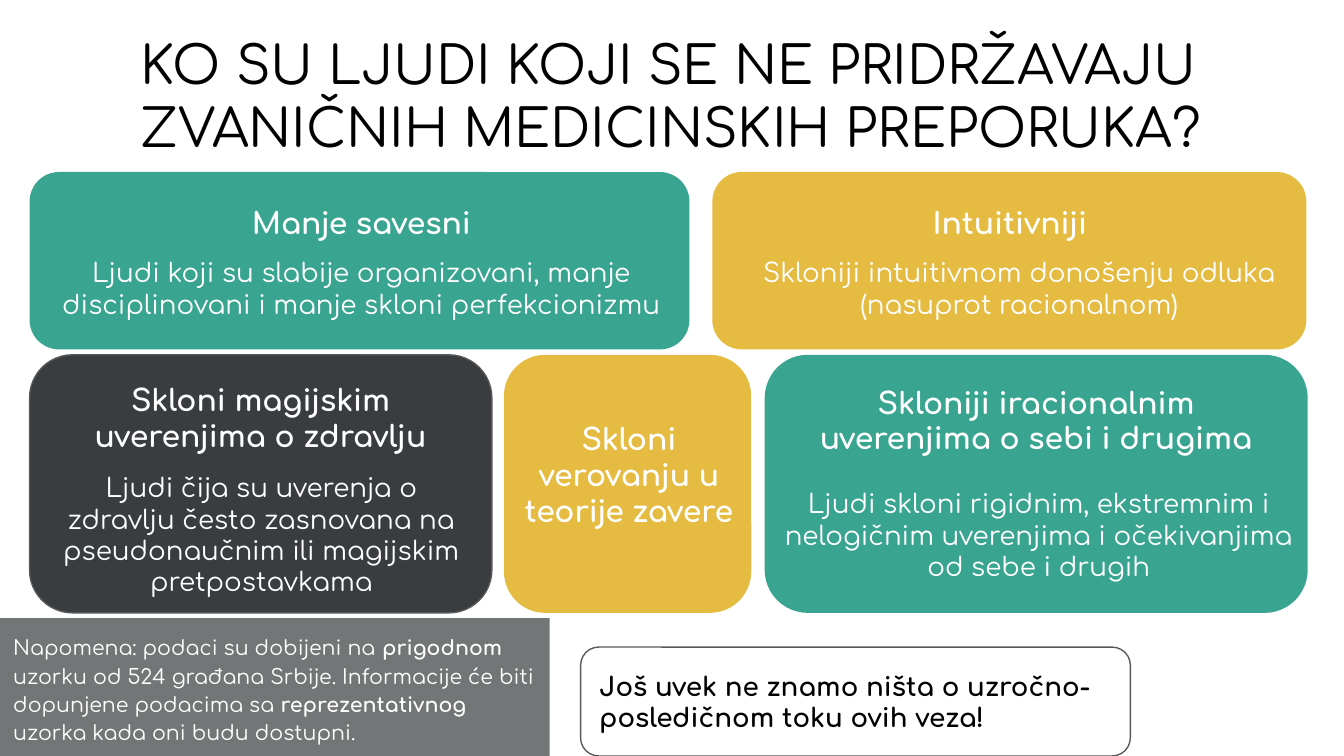
from dataclasses import dataclass

from pptx import Presentation
from pptx import util as u
from pptx.dml.color import RGBColor
from pptx.enum import shapes, text


@dataclass(frozen=True)
class Theme:
    font: str = "Comfortaa"
    black: str = "000000"
    white: str = "FFFFFF"
    green: str = "39A590"
    yellow: str = "E6BB41"
    dark: str = "3A3D40"
    grey: str = "737677"
    outline: str = "595959"
    title: int = 28
    heading: int = 16
    body: int = 14
    note: int = 11


class Deck:
    COLS, ROWS = 100, 56.25

    def __init__(self, theme):
        self.theme = theme
        self.prs = Presentation()
        self.prs.slide_width = u.Inches(10)
        self.prs.slide_height = u.Inches(5.625)
        self.slide = self.prs.slides.add_slide(self.prs.slide_layouts[6])

    def place(self, col, row, cols, rows):
        x = self.prs.slide_width / self.COLS
        y = self.prs.slide_height / self.ROWS
        return int(col * x), int(row * y), int(cols * x), int(rows * y)

    def panel(self, at, fill, line=None, kind=shapes.MSO_SHAPE.ROUNDED_RECTANGLE):
        sp = self.slide.shapes.add_shape(kind, *self.place(*at))
        sp.shadow.inherit = False
        sp.fill.solid()
        sp.fill.fore_color.rgb = RGBColor.from_string(fill)
        if line:
            sp.line.color.rgb = RGBColor.from_string(line)
            sp.line.width = u.Pt(0.75)
        else:
            sp.line.fill.background()
        return sp

    def set_text(self, sp, runs, size, color, bold=False, align=text.PP_ALIGN.LEFT,
                 anchor=text.MSO_ANCHOR.TOP, spacing=None):
        tf = sp.text_frame
        tf.word_wrap = True
        tf.vertical_anchor = anchor
        tf.margin_left = tf.margin_right = u.Inches(0.1)
        tf.margin_top = tf.margin_bottom = u.Inches(0.1)
        p = tf.paragraphs[0]
        p.alignment = align
        if spacing:
            p.line_spacing = spacing
        p.font.name = self.theme.font
        p.font.size = u.Pt(size)
        p.font.bold = bold
        p.font.color.rgb = RGBColor.from_string(color)
        for words, strong in runs:
            r = p.add_run()
            r.text = words
            if strong:
                r.font.bold = True

    def label(self, at, words, size, color, **style):
        sp = self.slide.shapes.add_textbox(*self.place(*at))
        self.set_text(sp, [(words, False)], size, color, **style)

    def card(self, at, fill, heading, body=None, line=None):
        t = self.theme
        self.panel(at, fill, line)
        center = text.PP_ALIGN.CENTER
        self.label(*heading, t.heading, t.white, bold=True, align=center)
        if body:
            self.label(*body, t.body, t.white, align=center)


def main():
    t = Theme()
    s = Deck(t)
    top, top_rows = 12.8, 13.2
    low, low_rows = 26.4, 19.2

    s.label((9.5, 1.4, 89.4, 11.5),
            "KO SU LJUDI KOJI SE NE PRIDRŽAVAJU ZVANIČNIH MEDICINSKIH PREPORUKA?",
            t.title, t.black)

    s.card((2.2, top, 49.1, top_rows), t.green,
           ((17.2, 14.2, 19.4, 4.7), "Manje savesni"),
           ((3.4, 18.1, 47, 6.7), "Ljudi koji su slabije organizovani, manje "
            "disciplinovani i manje skloni perfekcionizmu"))
    s.card((53, top, 44.2, top_rows), t.yellow,
           ((66.8, 14.2, 16.7, 4.7), "Intuitivniji"),
           ((54.5, 18.1, 42.7, 6.7),
            "Skloniji intuitivnom donošenju odluka (nasuprot racionalnom)"))
    s.card((2.2, low, 34.4, low_rows), t.dark,
           ((4.2, 27.4, 30.4, 7.4), "Skloni magijskim uverenjima o zdravlju"),
           ((3.2, 34.1, 32.5, 11.4), "Ljudi čija su uverenja o zdravlju često "
            "zasnovana na pseudonaučnim ili magijskim pretpostavkama"),
           line=t.outline)
    s.card((37.5, low, 18.4, low_rows), t.yellow,
           ((37.6, 30.3, 18.4, 10.1), "Skloni verovanju u teorije zavere"))
    s.card((56.9, low, 40.4, low_rows), t.green,
           ((58.2, 27.6, 37.8, 7.4),
            "Skloniji iracionalnim uverenjima o sebi i drugima"),
           ((57.1, 35.3, 40.4, 9.1), "Ljudi skloni rigidnim, ekstremnim i "
            "nelogičnim uverenjima i očekivanjima od sebe i drugih"))

    note = s.panel((0, 46, 40.9, 10.25), t.grey, kind=shapes.MSO_SHAPE.RECTANGLE)
    s.set_text(note, [("Napomena: podaci su dobijeni na ", False),
                      ("prigodnom ", True),
                      ("uzorku od 524 građana Srbije. Informacije će biti "
                       "dopunjene podacima sa ", False),
                      ("reprezentativnog ", True),
                      ("uzorka kada oni budu dostupni.", False)],
               t.note, t.white, spacing=1.15)

    caveat = s.panel((43.2, 48.15, 40.9, 8.1), t.white, t.outline)
    s.set_text(caveat,
               [("Još uvek ne znamo ništa o uzročno-posledičnom toku ovih veza!", False)],
               t.body, t.black, bold=True, anchor=text.MSO_ANCHOR.MIDDLE)

    s.prs.save("out.pptx")


if __name__ == "__main__":
    main()
